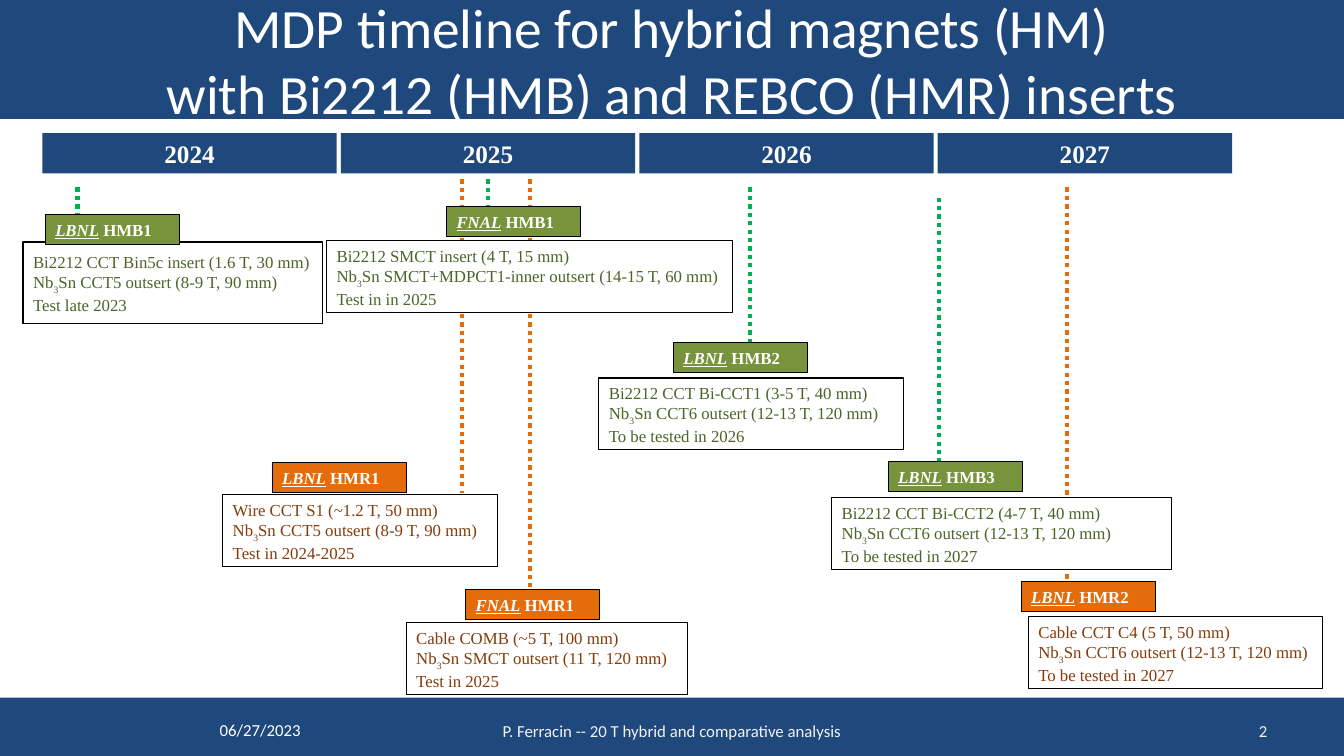
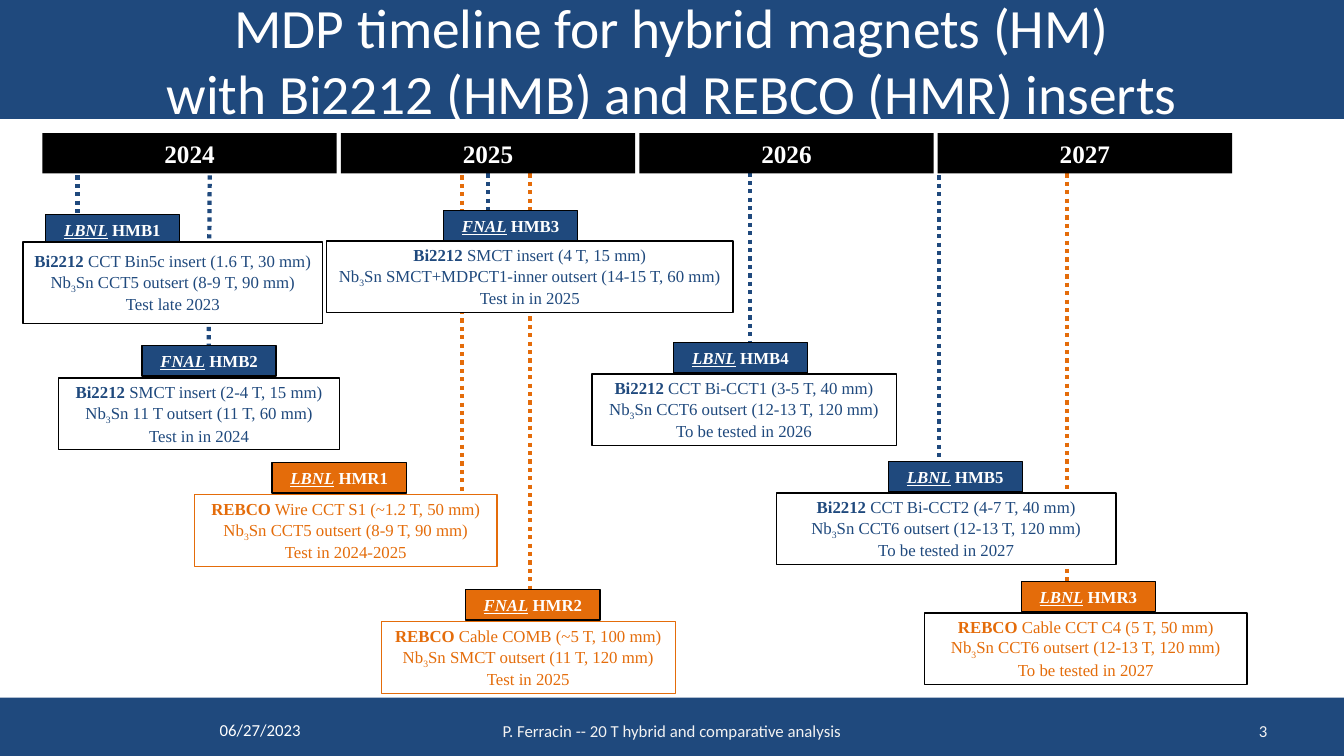
from typing import NamedTuple

from lxml import etree
from pptx import Presentation
from pptx.dml.color import RGBColor
from pptx.enum.dml import MSO_LINE
from pptx.enum.shapes import MSO_CONNECTOR, MSO_SHAPE
from pptx.enum.text import MSO_ANCHOR, MSO_AUTO_SIZE, PP_ALIGN
from pptx.oxml.ns import qn
from pptx.util import Emu, Pt

PX = 9144
WIDTH, HEIGHT = 1333, 750
TITLE_ONLY = 5
LEFT, CENTER, RIGHT = PP_ALIGN.LEFT, PP_ALIGN.CENTER, PP_ALIGN.RIGHT
TOP, MIDDLE = MSO_ANCHOR.TOP, MSO_ANCHOR.MIDDLE
RECTANGLE, STRAIGHT = MSO_SHAPE.RECTANGLE, MSO_CONNECTOR.STRAIGHT
DOTTED = MSO_LINE.ROUND_DOT
SANS, SERIF = "Calibri", "Times New Roman"
COLORS = {
    "navy": "1F497D", "white": "FFFFFF", "pale": "F2F2F2", "black": "000000",
    "orange": "E46C0A", "brown": "843C0B", "olive": "77933C",
    "moss": "4F6228", "green": "00B050",
}
TITLE = ("MDP timeline for hybrid magnets (HM)",
         "with Bi2212 (HMB) and REBCO (HMR) inserts")
YEARS = ("2024", "2025", "2026", "2027")


class Theme(NamedTuple):
    """Looks that differ between the two timelines."""
    year: str
    tags: dict
    texts: dict
    align: PP_ALIGN
    anchor: MSO_ANCHOR
    outline: float
    tag_in_front: bool


class Magnet(NamedTuple):
    """One magnet: its tag, its box and the lines inside."""
    lab: str
    name: str
    tag: tuple
    box: tuple
    lead: str
    insert: str
    outsert: str
    test: str
    edge: str = "black"
    outline: float = 0


GREEN_THEME = Theme("navy", {"HMB": "olive", "HMR": "orange"},
                    {"HMB": "moss", "HMR": "brown"}, LEFT, TOP, 0.75, True)
BLUE_THEME = Theme("black", {"HMB": "navy", "HMR": "orange"},
                   {"HMB": "navy", "HMR": "orange"}, CENTER, MIDDLE, 1, False)

GREEN_LINES = [
    (526, 178, 526, 596, "orange"), (77, 186, 77, 228, "green"),
    (484, 178, 484, 228, "green"), (744, 186, 744, 367, "green"),
    (931, 196, 931, 475, "green"), (458, 178, 458, 489, "orange"),
    (1058, 186, 1058, 586, "orange"),
]
BLUE_LINES = [
    (208, 174, 207, 343, "navy"), (526, 172, 526, 596, "orange"),
    (77, 174, 77, 228, "navy"), (484, 172, 484, 228, "navy"),
    (744, 171, 744, 367, "navy"), (931, 174, 931, 475, "navy"),
    (458, 174, 458, 489, "orange"), (1058, 172, 1058, 586, "orange"),
]
GREEN_MAGNETS = [
    Magnet("LBNL", "HMB1", (45, 213), (23, 240, 297, 81), "",
           "Bi2212 CCT Bin5c insert (1.6 T, 30 mm)",
           "CCT5 outsert (8-9 T, 90 mm)", "Test late 2023", outline=1),
    Magnet("FNAL", "HMB1", (443, 205), (324, 239, 403, 71), "",
           "Bi2212 SMCT insert (4 T, 15 mm)",
           "SMCT+MDPCT1-inner outsert (14-15 T, 60 mm)", "Test in in 2025"),
    Magnet("LBNL", "HMB2", (668, 340), (594, 375, 302, 71), "",
           "Bi2212 CCT Bi-CCT1 (3-5 T, 40 mm)",
           "CCT6 outsert (12-13 T, 120 mm)", "To be tested in 2026"),
    Magnet("LBNL", "HMB3", (881, 458), (825, 494, 337, 71), "",
           "Bi2212 CCT Bi-CCT2 (4-7 T, 40 mm)",
           "CCT6 outsert (12-13 T, 120 mm)", "To be tested in 2027"),
    Magnet("LBNL", "HMR1", (270, 459), (221, 491, 272, 71), "",
           "Wire CCT S1 (~1.2 T, 50 mm)",
           "CCT5 outsert (8-9 T, 90 mm)", "Test in 2024-2025"),
    Magnet("FNAL", "HMR1", (462, 585), (403, 618, 279, 71), "",
           "Cable COMB (~5 T, 100 mm)",
           "SMCT outsert (11 T, 120 mm)", "Test in 2025"),
    Magnet("LBNL", "HMR2", (1013, 577), (1020, 612, 292, 71), "",
           "Cable CCT C4 (5 T, 50 mm)",
           "CCT6 outsert (12-13 T, 120 mm)", "To be tested in 2027"),
]
BLUE_MAGNETS = [
    Magnet("LBNL", "HMB1", (45, 213), (23, 240, 297, 81), "Bi2212",
           " CCT Bin5c insert (1.6 T, 30 mm)",
           "CCT5 outsert (8-9 T, 90 mm)", "Test late 2023"),
    Magnet("FNAL", "HMB2", (141, 343), (58, 375, 279, 71), "Bi2212",
           " SMCT insert (2-4 T, 15 mm)",
           "11 T outsert (11 T, 60 mm)", "Test in in 2024"),
    Magnet("FNAL", "HMB3", (440, 209), (324, 239, 403, 71), "Bi2212",
           " SMCT insert (4 T, 15 mm)",
           "SMCT+MDPCT1-inner outsert (14-15 T, 60 mm)", "Test in in 2025"),
    Magnet("LBNL", "HMB4", (668, 340), (587, 371, 302, 71), "Bi2212",
           " CCT Bi-CCT1 (3-5 T, 40 mm)",
           "CCT6 outsert (12-13 T, 120 mm)", "To be tested in 2026"),
    Magnet("LBNL", "HMB5", (881, 458), (770, 489, 337, 71), "Bi2212",
           " CCT Bi-CCT2 (4-7 T, 40 mm)",
           "CCT6 outsert (12-13 T, 120 mm)", "To be tested in 2027"),
    Magnet("LBNL", "HMR1", (270, 459), (193, 491, 300, 71), "REBCO",
           " Wire CCT S1 (~1.2 T, 50 mm)",
           "CCT5 outsert (8-9 T, 90 mm)", "Test in 2024-2025", "orange", 0.75),
    Magnet("FNAL", "HMR2", (462, 585), (378, 617, 292, 71), "REBCO",
           " Cable COMB (~5 T, 100 mm)",
           "SMCT outsert (11 T, 120 mm)", "Test in 2025", "orange", 0.75),
    Magnet("LBNL", "HMR3", (1013, 577), (917, 608, 320, 71), "REBCO",
           " Cable CCT C4 (5 T, 50 mm)",
           "CCT6 outsert (12-13 T, 120 mm)", "To be tested in 2027"),
]


def px(*lengths):
    """Turn px lengths into EMU."""
    return [Emu(length * PX) for length in lengths]


def rgb(name):
    """Look up a colour by name."""
    return RGBColor.from_string(COLORS[name])


def fill(shape, color):
    """Fill a shape with one colour."""
    shape.fill.solid()
    shape.fill.fore_color.rgb = rgb(color)


def add_box(page, area, color, edge=None, outline=1):
    """Add a filled rectangle, outlined if an edge colour is given."""
    box = page.shapes.add_shape(RECTANGLE, *px(*area))
    box.shadow.inherit = False
    fill(box, color)
    if edge:
        box.line.color.rgb = rgb(edge)
        box.line.width = Pt(outline)
    else:
        box.line.fill.background()
    return box


def set_frame(box, anchor, inset=5):
    """Wrap the text of a box, set its anchor and vertical inset."""
    frame = box.text_frame
    frame.word_wrap = True
    frame.auto_size = MSO_AUTO_SIZE.NONE
    frame.vertical_anchor = anchor
    frame.margin_left, frame.margin_right = px(10, 10)
    frame.margin_top, frame.margin_bottom = px(inset, inset)
    return frame


def add_span(para, text, color, size=12, font=SERIF, bold=False):
    """Add one formatted run."""
    span = para.add_run()
    span.text = text
    span.font.name = font
    span.font.size = Pt(size)
    span.font.bold = bold
    span.font.color.rgb = rgb(color)
    return span


def add_title(page):
    """Place the title placeholder as the top band."""
    title = page.shapes.title
    title.left, title.top, title.width, title.height = px(0, 0, WIDTH, 118)
    fill(title, "navy")
    para = set_frame(title, MIDDLE).paragraphs[0]
    para.alignment = CENTER
    add_span(para, TITLE[0], "white", 39.6, SANS)
    para.add_line_break()
    add_span(para, TITLE[1], "white", 39.6, SANS)


def make_slide_number(span):
    """Turn a run into a slide number field."""
    run = span._r
    field = etree.Element(qn("a:fld"), type="slidenum",
                          id="{B6F15528-21DE-4FAA-801E-634DDDAF4B2B}")
    run.addprevious(field)
    field.extend(list(run))
    run.getparent().remove(run)


def add_footer(page, number):
    """Add the bottom band with date, talk and slide number."""
    add_box(page, (0, 692, WIDTH, HEIGHT - 692), "navy")
    footers = [
        ((208, 704, 170, 40), "06/27/2023", LEFT, "white"),
        ((375, 705, 583, 40), "P. Ferracin -- 20 T hybrid and comparative analysis",
         CENTER, "pale"),
        ((956, 705, 311, 40), str(number), RIGHT, "pale"),
    ]
    for area, text, align, color in footers:
        box = page.shapes.add_textbox(*px(*area))
        para = set_frame(box, MIDDLE).paragraphs[0]
        para.alignment = align
        span = add_span(para, text, color, font=SANS)
    make_slide_number(span)


def add_dotted_line(page, *ends, color):
    """Add a dotted line from a year to a magnet."""
    line = page.shapes.add_connector(STRAIGHT, *px(*ends))
    line.line.color.rgb = rgb(color)
    line.line.width = Pt(3)
    line.line.dash_style = DOTTED
    etree.SubElement(line._element.spPr, qn("a:effectLst"))


def add_years(page, color):
    """Add the row of year bars."""
    for index, year in enumerate(YEARS):
        bar = add_box(page, (42 + 296 * index, 132, 292, 40), color)
        para = set_frame(bar, TOP).paragraphs[0]
        para.alignment = CENTER
        add_span(para, year, "white", 18, bold=True)


def add_tag(page, magnet, theme):
    """Add the coloured tag with laboratory and magnet name."""
    tag = add_box(page, (*magnet.tag, 133, 30), theme.tags[magnet.name[:3]],
                  "black", theme.outline)
    para = set_frame(tag, theme.anchor).paragraphs[0]
    para.alignment = theme.align
    lab = add_span(para, magnet.lab, "white", bold=True)
    lab.font.italic = lab.font.underline = True
    add_span(para, " " + magnet.name, "white", bold=True)


def add_details(page, magnet, theme):
    """Add the box with insert, outsert and test date."""
    box = add_box(page, magnet.box, "white", magnet.edge,
                  magnet.outline or theme.outline)
    frame = set_frame(box, theme.anchor, 10 if magnet.box[3] > 71 else 5)
    color = theme.texts[magnet.name[:3]]
    paras = [frame.paragraphs[0], frame.add_paragraph(), frame.add_paragraph()]
    for para in paras:
        para.alignment = theme.align
    if magnet.lead:
        add_span(paras[0], magnet.lead, color, bold=True)
    add_span(paras[0], magnet.insert, color)
    add_span(paras[1], "Nb", color)
    subscript = add_span(paras[1], "3", color)
    subscript._r.get_or_add_rPr().set("baseline", "-25000")
    add_span(paras[1], "Sn " + magnet.outsert, color)
    add_span(paras[2], magnet.test, color)


def add_timeline(deck, number, theme, lines, magnets):
    """Add one timeline slide."""
    page = deck.slides.add_slide(deck.slide_layouts[TITLE_ONLY])
    add_title(page)
    add_footer(page, number)
    for *ends, color in lines:
        add_dotted_line(page, *ends, color=color)
    steps = [add_details, add_tag] if theme.tag_in_front else [add_tag, add_details]
    for magnet in magnets:
        for step in steps:
            step(page, magnet, theme)
    add_years(page, theme.year)


def main():
    """Build and save the deck."""
    deck = Presentation()
    deck.slide_width, deck.slide_height = px(WIDTH, HEIGHT)
    deck.element.set("firstSlideNum", "2")
    add_timeline(deck, 2, GREEN_THEME, GREEN_LINES, GREEN_MAGNETS)
    add_timeline(deck, 3, BLUE_THEME, BLUE_LINES, BLUE_MAGNETS)
    deck.save("out.pptx")


if __name__ == "__main__":
    main()
